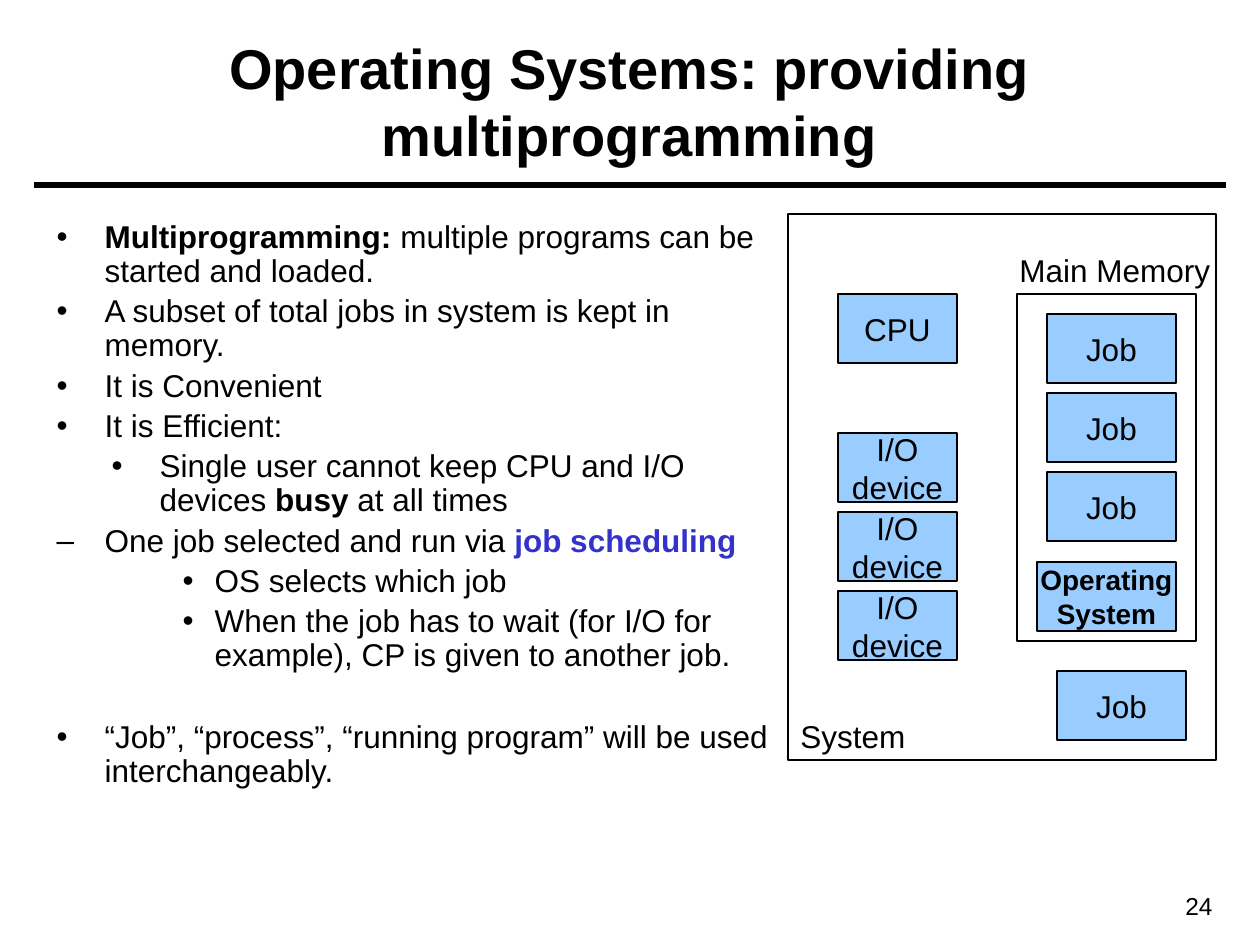
import pptx
import pptx.util
import pptx.dml.color
import pptx.enum.shapes
import pptx.enum.text
from lxml import etree
from pptx.oxml.ns import qn

PX = 914400 / 126
FONT = "Arial"
BLACK, BLUE, ACCENT = "000000", "99CCFF", "3333CC"
ALIGN = pptx.enum.text.PP_ALIGN
ANCHOR = pptx.enum.text.MSO_ANCHOR
AUTO_SIZE = pptx.enum.text.MSO_AUTO_SIZE

# level, left margin, hanging indent, bullet, space before (pt), runs of (text, bold, colour)
BULLETS = [
    (1, 48, 48, "•", 3.6, [("Multiprogramming:", True, BLACK),
                           (" multiple programs can be started and loaded.", False, BLACK)]),
    (1, 48, 48, "•", 3.6, [("A subset of total jobs in system is kept in memory.", False, BLACK)]),
    (1, 48, 48, "•", 3.6, [("It is Convenient", False, BLACK)]),
    (1, 48, 48, "•", 3.6, [("It is Efficient:", False, BLACK)]),
    (2, 103, 48, "•", 3.6, [("Single user cannot keep CPU and I/O devices ", False, BLACK),
                            ("busy", True, BLACK), (" at all times", False, BLACK)]),
    (1, 48, 48, "–", 3.6, [("One job selected and run via ", False, BLACK),
                           ("job scheduling", True, ACCENT)]),
    (2, 158, 32, "•", 3.6, [("OS selects which job", False, BLACK)]),
    (2, 158, 32, "•", 3.6, [("When the job has to wait (for I/O for example), "
                             "CP is given to another job.", False, BLACK)]),
    (0, 48, 48, "•", 27, [("“Job”, “process”, “running program” will be used "
                           "interchangeably.", False, BLACK)]),
]


def px(length):
    return pptx.util.Emu(round(length * PX))


def color(value):
    return pptx.dml.color.RGBColor.from_string(value)


def set_box(shape, box):
    shape.left, shape.top, shape.width, shape.height = map(px, box)


def set_font(font, size, bold=False):
    font.name = FONT
    font.size = pptx.util.Pt(size)
    font.bold = bold
    font.color.rgb = color(BLACK)


def set_text(shape, text, size=18, bold=False, align=ALIGN.CENTER):
    frame = shape.text_frame
    frame.text = text
    for paragraph in frame.paragraphs:
        paragraph.alignment = align
        set_font(paragraph.font, size, bold)
    return frame


def set_bullet(paragraph, margin, indent, character):
    properties = paragraph._p.get_or_add_pPr()
    properties.set("marL", str(px(margin)))
    properties.set("indent", str(-px(indent)))
    etree.SubElement(properties, qn("a:buFont")).set("typeface", FONT)
    etree.SubElement(properties, qn("a:buChar")).set("char", character)


def add_box(slide, box, text="", fill=None, size=18, bold=False):
    shape = slide.shapes.add_shape(pptx.enum.shapes.MSO_SHAPE.RECTANGLE, *map(px, box))
    shape.shadow.inherit = False
    shape.line.color.rgb = color(BLACK)
    shape.line.width = pptx.util.Pt(0.75)
    if fill:
        shape.fill.solid()
        shape.fill.fore_color.rgb = color(fill)
    else:
        shape.fill.background()
    if text:
        frame = set_text(shape, text, size, bold)
        frame.word_wrap = False
        frame.vertical_anchor = ANCHOR.MIDDLE


def add_label(slide, box, text, size=18, align=ALIGN.LEFT):
    label = slide.shapes.add_textbox(*map(px, box))
    frame = set_text(label, text, size, align=align)
    frame.word_wrap = True
    frame.auto_size = AUTO_SIZE.NONE


def add_header(slide, box):
    left, top, width, height = box
    title = slide.shapes.title
    set_box(title, box)
    frame = set_text(title, "Operating Systems: providing multiprogramming", 32, True)
    frame.auto_size = AUTO_SIZE.NONE
    frame.vertical_anchor = ANCHOR.MIDDLE

    # Rule under the title, a little wider than it
    y = px(top + height + 5)
    rule = slide.shapes.add_connector(pptx.enum.shapes.MSO_CONNECTOR.STRAIGHT,
                                      px(left - 10), y, px(left + width + 11), y)
    rule.line.color.rgb = color(BLACK)
    rule.line.width = pptx.util.Pt(3)
    etree.SubElement(rule._element.spPr, qn("a:effectLst"))


def add_bullets(slide, box):
    body = slide.placeholders[1]
    set_box(body, box)
    frame = body.text_frame
    frame.auto_size = AUTO_SIZE.NONE
    for index, (level, margin, indent, character, before, runs) in enumerate(BULLETS):
        paragraph = frame.add_paragraph() if index else frame.paragraphs[0]
        paragraph.level = level
        paragraph.line_spacing = 0.9
        paragraph.space_before = pptx.util.Pt(before)
        set_bullet(paragraph, margin, indent, character)
        set_font(paragraph.font, 18)
        for text, bold, run_color in runs:
            run = paragraph.add_run()
            run.text = text
            if bold:
                run.font.bold = True
            if run_color != BLACK:
                run.font.color.rgb = color(run_color)


def add_memory(slide, box):
    left, top, width, height = box
    add_box(slide, box)
    add_label(slide, (left - 10, top - 49, 222, 50), "Main Memory")
    for row in range(3):
        add_box(slide, (left + 30, top + 20 + 79 * row, 129, 69), "Job", BLUE)
    add_box(slide, (left + 20, top + 268, 139, 69), "Operating\nSystem", BLUE, 16, True)


def add_system(slide, box):
    left, top, width, height = box
    add_box(slide, box)
    add_label(slide, (left, top + height - 49, 130, 50), "System")

    # Processor and devices
    add_box(slide, (left + 50, top + 80, 119, 69), "CPU", BLUE)
    for row in range(3):
        add_box(slide, (left + 50, top + 219 + 79 * row, 119, 69), "I/O\vdevice", BLUE)

    # Memory, and the job waiting outside it
    add_memory(slide, (left + 229, top + 80, 179, 347))
    add_box(slide, (left + 269, top + 457, 129, 69), "Job", BLUE)


def main():
    presentation = pptx.Presentation()
    presentation.slide_width = px(1260)
    presentation.slide_height = px(945)
    slide = presentation.slides.add_slide(presentation.slide_layouts[1])
    add_header(slide, (44, 22, 1171, 158))
    add_bullets(slide, (44, 215, 753, 645))
    add_system(slide, (788, 214, 428, 546))
    add_label(slide, (1094, 885, 131, 43), "24", 14, ALIGN.RIGHT)
    presentation.save("out.pptx")


if __name__ == "__main__":
    main()
